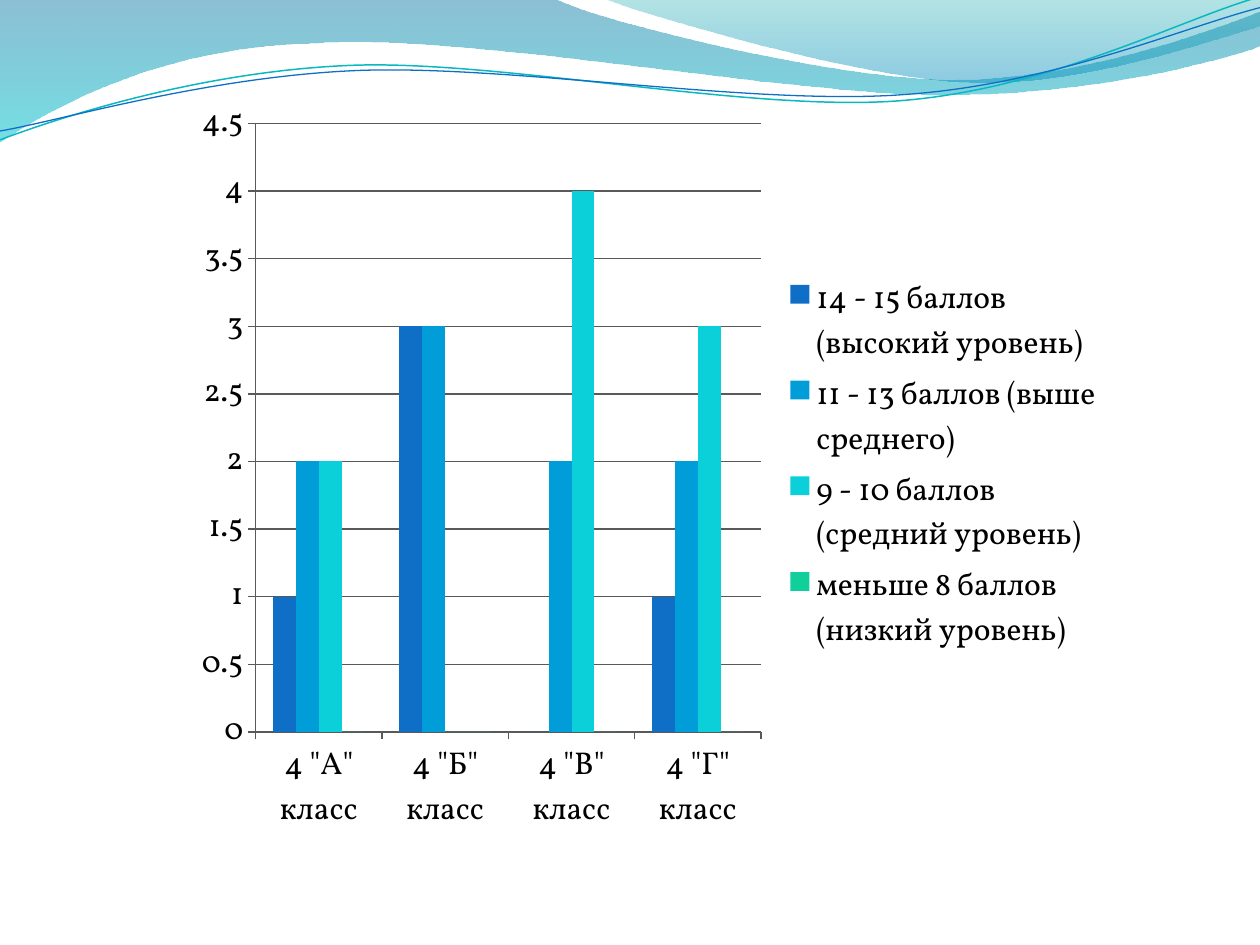
from math import cos, radians, sin

from lxml import etree
from pptx import Presentation
from pptx.chart.data import CategoryChartData
from pptx.dml.color import RGBColor
from pptx.enum.chart import XL_CHART_TYPE, XL_LEGEND_POSITION, XL_TICK_MARK
from pptx.oxml import parse_xml
from pptx.oxml.ns import nsdecls, qn
from pptx.util import Inches, Pt

CLUSTERED = XL_CHART_TYPE.COLUMN_CLUSTERED
LEGEND_RIGHT = XL_LEGEND_POSITION.RIGHT
TICK_OUT, TICK_NONE = XL_TICK_MARK.OUTSIDE, XL_TICK_MARK.NONE
FONT, BLACK, AXIS_GREY = "Vollkorn", "000000", "595959"
WIDTH, HEIGHT = 10, 7.5
UNITS = 1000  # outline units per inch
LINE_TILT = 2.7
LINE_CENTRE = (4.99, 0.58)

# Each wave is a start point followed by segments:
# two numbers for a straight line, six for a cubic curve.
BACK_WAVE = [
    (0, 0), (4.4, -0.01),
    (4.76, 0.17, 6.64, 0.63, 7.58, 0.63), (8.53, 0.63, 9.58, 0.26, 10, 0.09),
    (10.01, 0.36),
    (9.83, 0.44, 8.7, 0.76, 7.46, 0.75), (6.22, 0.75, 3.82, 0.28, 2.57, 0.34),
    (1.29, 0.36, 0.46, 0.83, -0.01, 1.13), (0, 0),
]
FRONT_WAVE = [
    (4.79, -0.01),
    (5.09, 0.11, 6.82, 0.62, 7.69, 0.65), (8.56, 0.69, 9.61, 0.32, 10, 0.21),
    (10, 0), (4.79, -0.01),
]
TEAL_LINE = [
    (0, 1.11), (0.48, 0.93, 1.58, 0.57, 2.77, 0.52),
    (3.95, 0.47, 5.93, 0.89, 7.13, 0.8), (8.33, 0.71, 9.38, 0.15, 9.98, -0.02),
]
BLUE_LINE = [
    (0, 1.04), (0.47, 0.96, 1.64, 0.61, 2.83, 0.56),
    (4.03, 0.51, 5.97, 0.84, 7.17, 0.75), (8.36, 0.67, 9.41, 0.21, 10, 0.06),
]
CLASSES = [f'4 "{letter}" класс' for letter in "АБВГ"]
SCORES = [
    ("14 - 15 баллов (высокий уровень)", (1, 3, 0, 1), "0F6FC6"),
    ("11 - 13 баллов (выше среднего)", (2, 3, 2, 2), "009DD9"),
    ("9 - 10 баллов (средний уровень)", (2, 0, 4, 3), "0BD0D9"),
    ("меньше 8 баллов (низкий уровень)", (0, 0, 0, 0), "10CF9B"),
]


def color(hex_code):
    return RGBColor.from_string(hex_code)


def turn(point, degrees):
    """Turn a point clockwise about the centre of the wave lines."""
    dx, dy = (value - middle for value, middle in zip(point, LINE_CENTRE))
    c, s = cos(radians(degrees)), sin(radians(degrees))
    return LINE_CENTRE[0] + dx * c - dy * s, LINE_CENTRE[1] + dx * s + dy * c


def add_outline(page, segments, close, tilt=0):
    """Draw straight and cubic segments, the tilt being held as shape rotation."""
    points = [turn(segment[i:i + 2], tilt)
              for segment in segments for i in range(0, len(segment), 2)]
    points = [(round(x * UNITS), round(y * UNITS)) for x, y in points]
    builder = page.shapes.build_freeform(*points[0], scale=Inches(1) / UNITS)
    builder.add_line_segments(points[1:], close=close)
    outline = builder.convert_to_shape()
    outline.shadow.inherit = False
    outline.rotation = -tilt % 360

    steps = iter(list(outline._element.iter(qn("a:lnTo"))))
    for segment in segments[1:]:
        first = next(steps)
        if len(segment) == 6:
            curve = etree.Element(qn("a:cubicBezTo"))
            first.addprevious(curve)
            for step in (first, next(steps), next(steps)):
                curve.append(step[0])
                step.getparent().remove(step)
    return outline


def add_wave(page, segments, stops):
    """Draw a wave shaded downwards through (colour, opacity %) stops."""
    wave = add_outline(page, segments, True)
    wave.line.fill.background()
    wave.fill.gradient()
    wave.fill.gradient_angle = 270
    for stop, (hex_code, _) in zip(wave.fill.gradient_stops, stops):
        stop.color.rgb = color(hex_code)
    tints = wave._element.spPr.iter(qn("a:srgbClr"))
    for tint, (_, opacity) in zip(list(tints), stops):
        etree.SubElement(tint, qn("a:alpha")).set("val", str(opacity * 1000))


def add_wave_line(page, segments, hex_code, width):
    stroke = add_outline(page, segments, False, LINE_TILT)
    stroke.fill.background()
    stroke.line.color.rgb = color(hex_code)
    stroke.line.width = Pt(width)


def add_header(page):
    add_wave(page, BACK_WAVE, [("0074A1", 45), ("00C6CF", 55)])
    add_wave(page, FRONT_WAVE, [("00A1A9", 30), ("008BBF", 45)])
    add_wave_line(page, TEAL_LINE, "0AB8BF", 0.85)
    add_wave_line(page, BLUE_LINE, "0F6FC6", 0.75)


def set_layout(part, box, chart_size, inner=False):
    """Place a chart part by left, top, width, height in inches within the chart."""
    shares = [length / whole for length, whole in zip(box, chart_size * 2)]
    target = '<c:layoutTarget val="inner"/>' if inner else ""
    modes = '<c:xMode val="edge"/><c:yMode val="edge"/>'
    sizes = "".join(f'<c:{tag} val="{share}"/>' for tag, share in zip("xywh", shares))
    layout = parse_xml(f'<c:layout {nsdecls("c")}><c:manualLayout>{target}{modes}'
                       f'{sizes}</c:manualLayout></c:layout>')
    for old in part.findall(qn("c:layout")):
        part.remove(old)
    position = part.find(qn("c:legendPos"))
    if position is None:
        part.insert(0, layout)
    else:
        position.addnext(layout)


def style_line(line):
    line.color.rgb = color(AXIS_GREY)
    line.width = Pt(0.75)


def add_score_chart(page, left, top, width, height):
    data = CategoryChartData()
    data.categories = CLASSES
    for name, values, _ in SCORES:
        data.add_series(name, values)
    frame = [Inches(length) for length in (left, top, width, height)]
    chart = page.shapes.add_chart(CLUSTERED, *frame, data).chart
    chart.has_title = False
    chart.font.name, chart.font.size = FONT, Pt(18)
    chart.font.color.rgb = color(BLACK)

    plot = chart.plots[0]
    plot.gap_width, plot.overlap = 150, 0
    plot.vary_by_categories = False
    for series, (_, _, hex_code) in zip(plot.series, SCORES):
        series.format.fill.solid()
        series.format.fill.fore_color.rgb = color(hex_code)

    for axis in (chart.category_axis, chart.value_axis):
        axis.major_tick_mark, axis.minor_tick_mark = TICK_OUT, TICK_NONE
        style_line(axis.format.line)
    scale = chart.value_axis
    scale.minimum_scale, scale.maximum_scale, scale.major_unit = 0, 4.5, 0.5
    scale.has_major_gridlines = True
    style_line(scale.major_gridlines.format.line)

    chart.has_legend = True
    chart.legend.position = LEGEND_RIGHT
    chart.legend.include_in_layout = False
    plot_area = chart._chartSpace.chart.plotArea
    set_layout(plot_area, (0.57, 0.3, 4.01, 4.83), (width, height), inner=True)
    set_layout(chart.legend._element, (4.73, 1.48, 2.59, 3.09), (width, height))


def main():
    deck = Presentation()
    deck.slide_width, deck.slide_height = Inches(WIDTH), Inches(HEIGHT)
    page = deck.slides.add_slide(deck.slide_layouts[6])
    add_header(page)
    add_score_chart(page, 1.46, 0.68, 7.4, 6.06)
    deck.save("out.pptx")


if __name__ == "__main__":
    main()
